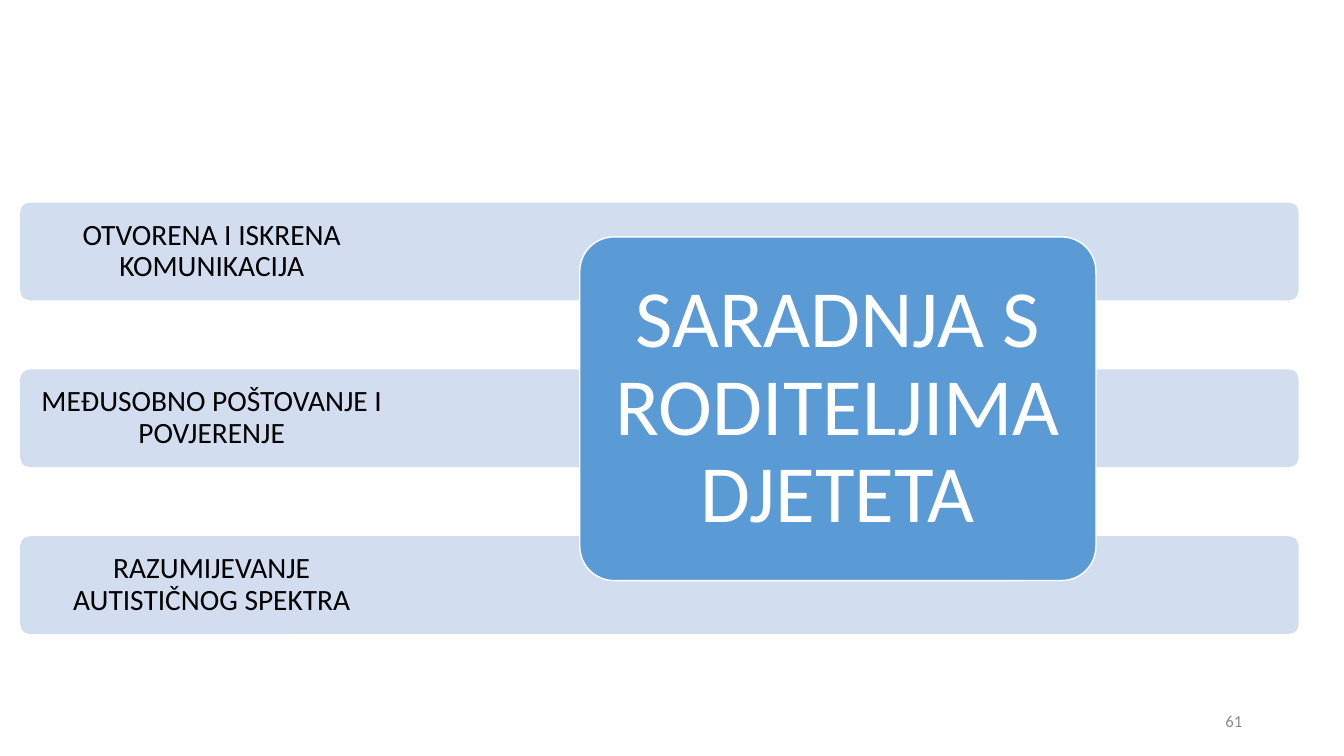
import pptx
import pptx.util
import pptx.dml.color
import pptx.enum.shapes
import pptx.enum.text

Inches = pptx.util.Inches
ALIGN = pptx.enum.text.PP_ALIGN

# Content
PRINCIPLES = [
    "OTVORENA I ISKRENA KOMUNIKACIJA",
    "MEĐUSOBNO POŠTOVANJE I POVJERENJE",
    "RAZUMIJEVANJE AUTISTIČNOG SPEKTRA",
]
TOPIC = "SARADNJA S RODITELJIMA DJETETA"
PAGE_NUMBER = "61"

# Layout in inches
BAR_LEFT, BAR_TOP, BAR_WIDTH, BAR_HEIGHT = 0.2, 2.01, 12.68, 0.97
BAR_STEP = 1.655
LABEL_WIDTH = 3.8
TOPIC_AREA = (5.75, 2.35, 5.12, 3.41)
NUMBER_AREA = (9.42, 6.95, 3, 0.4)


def color(value):
    return pptx.dml.color.RGBColor.from_string(value)


def write(box, text, size, ink, inset, align=ALIGN.CENTER, spacing=0.9):
    frame = box.text_frame
    margins = dict.fromkeys(
        ("margin_left", "margin_top", "margin_right", "margin_bottom"), Inches(inset))
    settings = {"word_wrap": True,
                "vertical_anchor": pptx.enum.text.MSO_ANCHOR.MIDDLE, **margins}
    for name, value in settings.items():
        setattr(frame, name, value)
    para = frame.paragraphs[0]
    para.alignment = align
    para.line_spacing = spacing
    span = para.add_run()
    span.text = text
    for name, value in {"name": "Calibri", "size": pptx.util.Pt(size)}.items():
        setattr(span.font, name, value)
    span.font.color.rgb = color(ink)


def add_panel(page, area, fill, outline=None):
    panel = page.shapes.add_shape(
        pptx.enum.shapes.MSO_SHAPE.ROUNDED_RECTANGLE, *map(Inches, area))
    panel.shadow.inherit = False
    panel.adjustments[0] = 0.1
    panel.fill.solid()
    panel.fill.fore_color.rgb = color(fill)
    if outline:
        panel.line.color.rgb = color(outline)
        panel.line.width = pptx.util.Pt(1)
    else:
        panel.line.fill.background()
    return panel


def add_text(page, area, *details, **options):
    write(page.shapes.add_textbox(*map(Inches, area)), *details, **options)


def main():
    deck = pptx.Presentation()
    deck.slide_width, deck.slide_height = Inches(13.33), Inches(7.5)
    page = deck.slides.add_slide(deck.slide_layouts[6])

    # Page number
    add_text(page, NUMBER_AREA, PAGE_NUMBER, 12, "8C8C8C", 0.1,
             align=ALIGN.RIGHT, spacing=1.0)

    # Principle bars with labels at the left
    for index, principle in enumerate(PRINCIPLES):
        top = BAR_TOP + index * BAR_STEP
        add_panel(page, (BAR_LEFT, top, BAR_WIDTH, BAR_HEIGHT), "D2DEEF")
        add_text(page, (BAR_LEFT, top, LABEL_WIDTH, BAR_HEIGHT),
                 principle, 21, "000000", 0.16)

    # Topic panel across the bars
    topic = add_panel(page, TOPIC_AREA, "5B9BD5", "FFFFFF")
    write(topic, TOPIC, 58, "FFFFFF", 0.24)

    deck.save("out.pptx")


if __name__ == "__main__":
    main()
